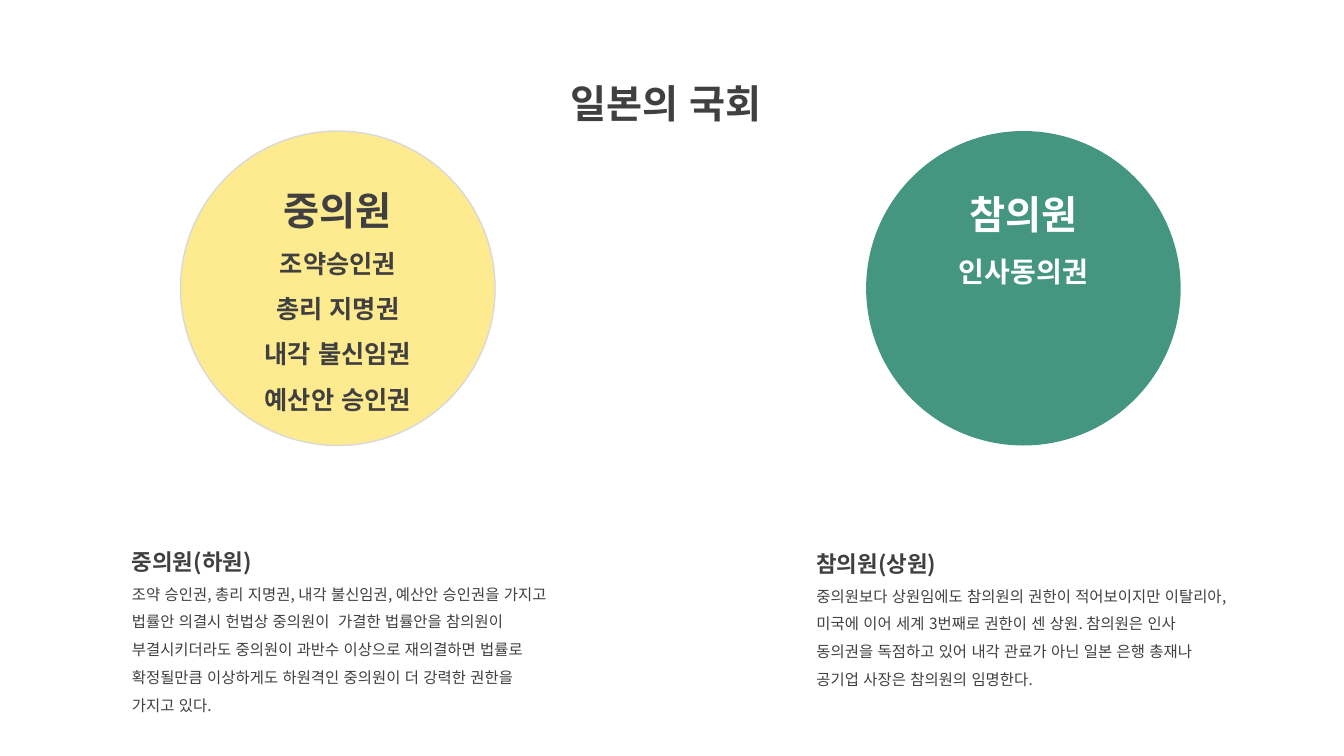
from lxml import etree
from pptx import Presentation
from pptx.dml.color import RGBColor
from pptx.enum.lang import MSO_LANGUAGE_ID
from pptx.enum.shapes import MSO_SHAPE
from pptx.enum.text import MSO_ANCHOR, MSO_AUTO_SIZE, PP_ALIGN
from pptx.oxml.ns import qn
from pptx.util import Inches, Pt

OVAL = MSO_SHAPE.OVAL
TOP, MIDDLE = MSO_ANCHOR.TOP, MSO_ANCHOR.MIDDLE
LEFT, CENTER = PP_ALIGN.LEFT, PP_ALIGN.CENTER
NO_FIT = MSO_AUTO_SIZE.NONE
KOREAN = MSO_LANGUAGE_ID.KOREAN
FONT = "Noto Sans CJK KR"
COLORS = {"ink": "404040", "white": "FFFFFF", "green": "449680",
          "yellow": "FEEB8F", "edge": "D9D9D9"}
TITLE_BOX = (4.29, 0.5, 4.63, 0.81)
DIAMETER = 3.12
NOTE_WIDTH = 4.34

HOUSES = [
    {"circle": (8.59, 1.3), "fill": "green", "edge": None, "ink": "white",
     "name": "참의원", "powers": ["인사동의권"], "power_size": 20, "lift": 1.21,
     "note": (8, 5.28, NOTE_WIDTH, 1.62), "heading": "참의원(상원)",
     "body": "중의원보다 상원임에도 참의원의 권한이 적어보이지만 이탈리아, "
             "미국에 이어 세계 3번째로 권한이 센 상원. 참의원은 인사 "
             "동의권을 독점하고 있어 내각 관료가 아닌 일본 은행 총재나 공기업 "
             "사장은 참의원의 임명한다."},
    {"circle": (1.79, 1.3), "fill": "yellow", "edge": "edge", "ink": "ink",
     "name": "중의원",
     "powers": ["조약승인권", "총리 지명권", "내각 불신임권", "예산안 승인권"],
     "power_size": 18, "lift": 0,
     "note": (1.21, 5.26, NOTE_WIDTH, 1.89), "heading": "중의원(하원)",
     "body": "조약 승인권, 총리 지명권, 내각 불신임권, 예산안 승인권을 "
             "가지고 법률안 의결시 헌법상 중의원이  가결한 법률안을 참의원이 "
             "부결시키더라도 중의원이 과반수 이상으로 재의결하면 법률로 "
             "확정될만큼 이상하게도 하원격인 중의원이 더 강력한 권한을 "
             "가지고 있다."},
]


def rgb(name):
    """Return the named colour."""
    return RGBColor.from_string(COLORS[name])


def write(tf, lines, color, align, anchor):
    """Fill a text frame with (text, size, bold) lines."""
    tf.word_wrap = True
    tf.auto_size = NO_FIT
    tf.vertical_anchor = anchor
    tf.margin_left = tf.margin_right = Inches(0.1)
    tf.margin_top = tf.margin_bottom = Inches(0.05)
    for i, (text, size, bold) in enumerate(lines):
        p = tf.add_paragraph() if i else tf.paragraphs[0]
        p.alignment = align
        p.line_spacing = 1.5
        p.space_before = p.space_after = Pt(0)
        r = p.add_run()
        r.text = text
        r.font.name = FONT
        r.font.size = Pt(size)
        r.font.bold = bold
        r.font.color.rgb = rgb(color)
        r.font.language_id = KOREAN
        latin = r.font._element.find(qn("a:latin"))
        ea = etree.Element(qn("a:ea"), typeface=FONT)
        latin.addnext(ea)


def add_title(s, box, text):
    """Place the slide title in its box."""
    sp = s.shapes.title
    sp.left, sp.top, sp.width, sp.height = map(Inches, box)
    write(sp.text_frame, [(text, 28, True)], "ink", CENTER, TOP)


def add_circle(s, box, house):
    """Draw a house's circle with its name and powers."""
    sp = s.shapes.add_shape(OVAL, *map(Inches, box))
    sp.shadow.inherit = False
    sp.fill.solid()
    sp.fill.fore_color.rgb = rgb(house["fill"])
    if house["edge"]:
        sp.line.color.rgb = rgb(house["edge"])
        sp.line.width = Pt(1)
    else:
        sp.line.fill.background()
    lines = [(house["name"], 28, True)]
    lines += [(power, house["power_size"], True) for power in house["powers"]]
    tf = sp.text_frame
    write(tf, lines, house["ink"], CENTER, MIDDLE)
    tf.margin_bottom = Inches(0.05 + house["lift"])


def add_note(s, box, house):
    """Write the heading and description of a house."""
    sp = s.shapes.add_textbox(*map(Inches, box))
    lines = [(house["heading"], 16, True), (house["body"], 11, False)]
    write(sp.text_frame, lines, "ink", LEFT, TOP)


def main():
    """Build and save the slide."""
    prs = Presentation()
    prs.slide_width, prs.slide_height = Inches(13.33), Inches(7.5)
    s = prs.slides.add_slide(prs.slide_layouts[5])
    add_title(s, TITLE_BOX, "일본의 국회")
    for house in HOUSES:
        add_circle(s, (*house["circle"], DIAMETER, DIAMETER), house)
        add_note(s, house["note"], house)
    prs.save("out.pptx")


if __name__ == "__main__":
    main()
